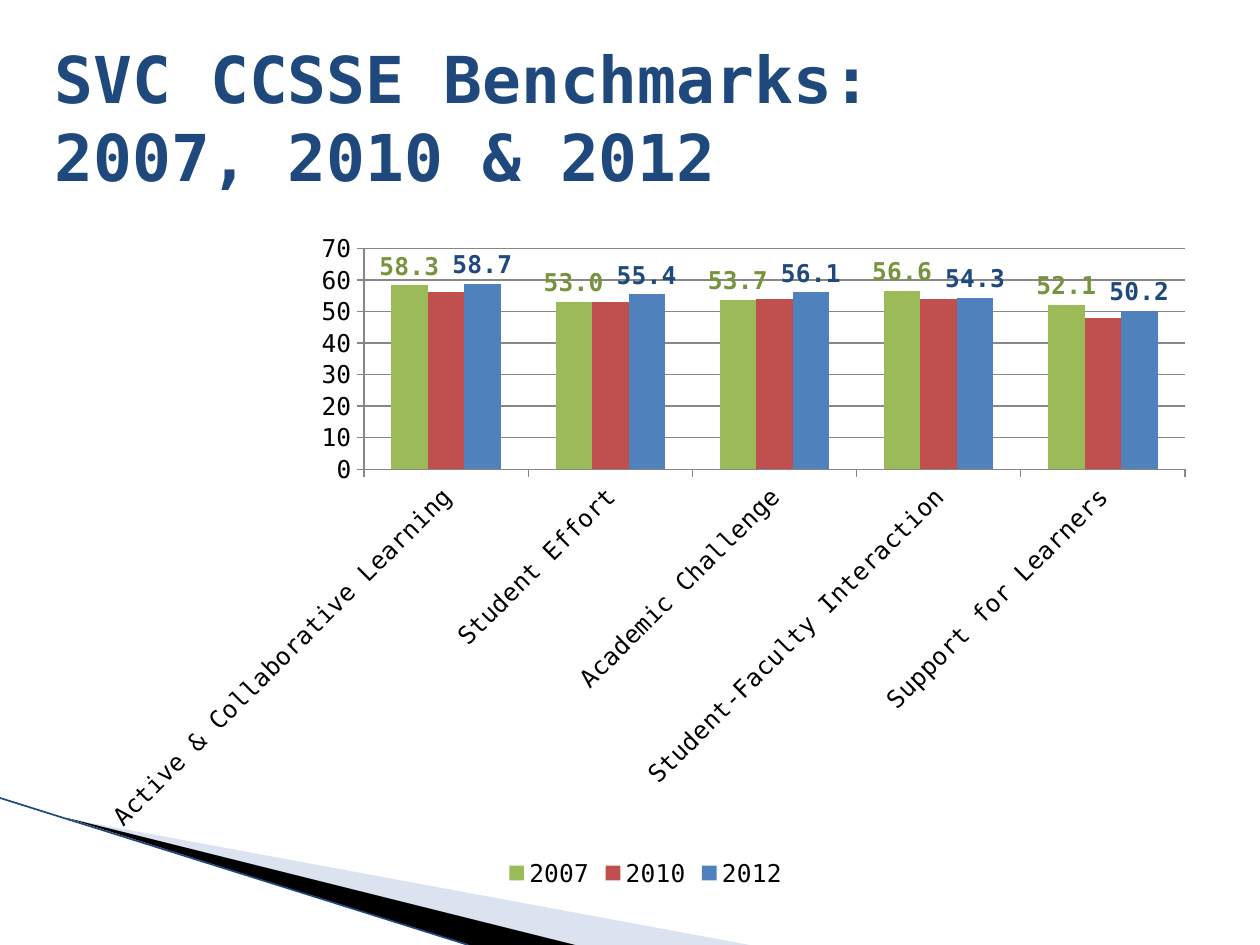
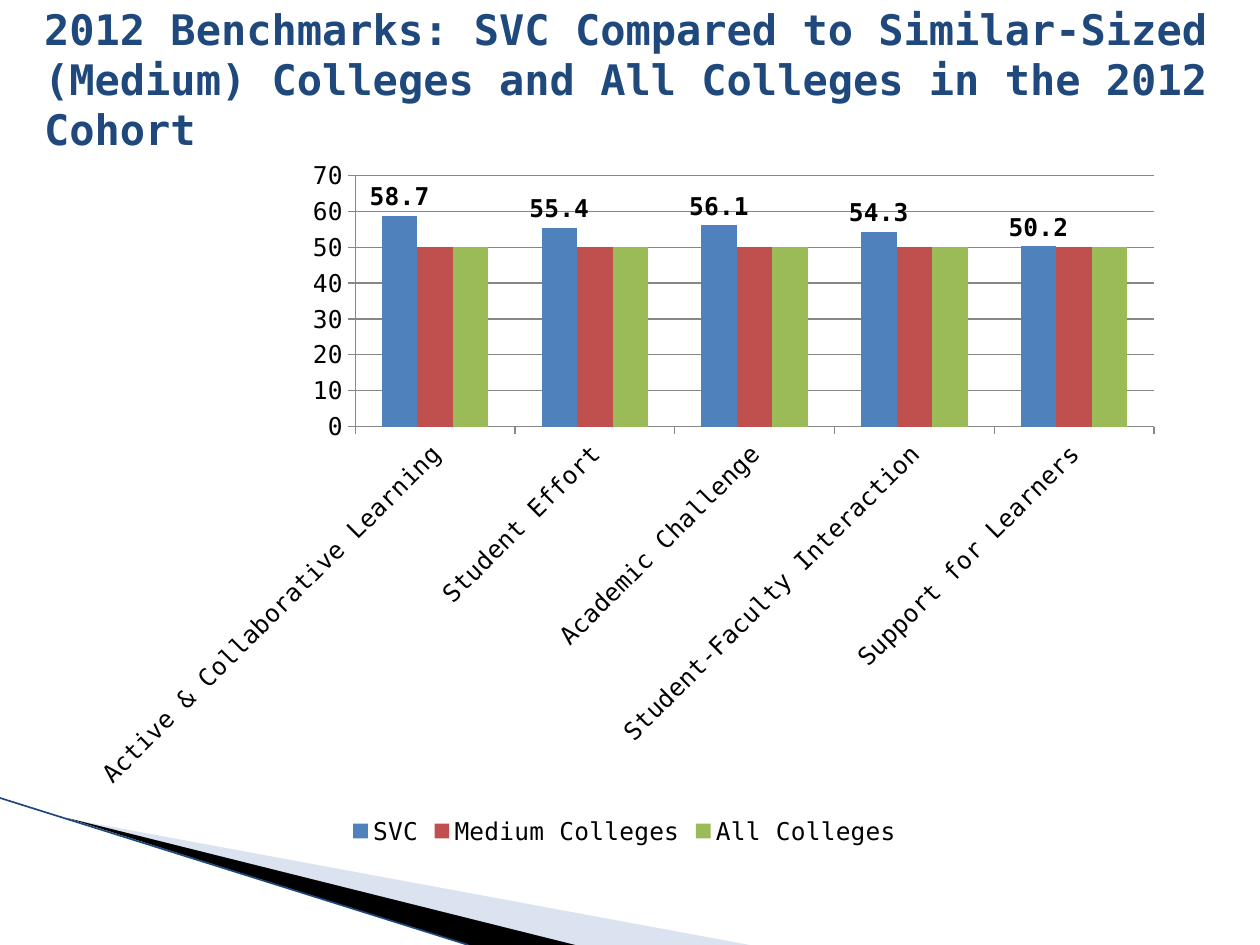
import dataclasses

import pptx
import pptx.chart.data
import pptx.dml.color
import pptx.enum.chart
import pptx.enum.shapes
import pptx.enum.text
import pptx.oxml.ns
import pptx.oxml.xmlchemy
import pptx.util

SLIDE_WIDTH = pptx.util.Inches(10)
SLIDE_HEIGHT = pptx.util.Inches(7.5)
COLUMNS, ROWS = 120, 90
TITLE_ONLY = 5


@dataclasses.dataclass(frozen=True)
class Theme:
    """Colours, font and type sizes of the deck."""
    font: str = "DejaVu Sans Mono"
    navy: str = "1F497D"
    black: str = "000000"
    pale_blue: str = "A7B9DB"
    grid: str = "878787"
    green: str = "9BBB59"
    dark_green: str = "77933C"
    red: str = "C0504D"
    blue: str = "4F81BD"
    large_title: float = 36.9
    small_title: float = 24
    chart_text: float = 14


@dataclasses.dataclass(frozen=True)
class Series:
    """One set of columns; label_color is set when values are shown."""
    name: str
    values: tuple
    color: str
    label_color: str = ""


THEME = Theme()
BENCHMARKS = ("Active & Collaborative Learning", "Student Effort",
              "Academic Challenge", "Student-Faculty Interaction",
              "Support for Learners")
SVC_2012 = (58.7, 55.4, 56.1, 54.3, 50.2)
COHORT_MEAN = (50,) * len(BENCHMARKS)


def rgb(color):
    """Turn a hex string into a colour."""
    return pptx.dml.color.RGBColor.from_string(color)


def grid(column, row):
    """Turn a column and a row into a place on the slide."""
    return int(SLIDE_WIDTH * column / COLUMNS), int(SLIDE_HEIGHT * row / ROWS)


def style_font(font, size, color, bold=False):
    """Apply the deck font with a size, colour and weight."""
    font.name = THEME.font
    font.size = pptx.util.Pt(size)
    font.color.rgb = rgb(color)
    font.bold = bold


def style_line(line, color, width=0.75):
    """Give a line its colour and width in points."""
    line.color.rgb = rgb(color)
    line.width = pptx.util.Pt(width)


def add_wedge(slide, corners, color, opacity=100):
    """Draw a filled outline through grid corners."""
    points = [grid(*corner) for corner in corners]
    builder = slide.shapes.build_freeform(*points[0], scale=1.0)
    builder.add_line_segments(points[1:], close=True)
    wedge = builder.convert_to_shape()
    wedge.shadow.inherit = False
    wedge.fill.solid()
    wedge.fill.fore_color.rgb = rgb(color)
    wedge.line.fill.background()
    if opacity < 100:
        tint = wedge.element.find(".//" + pptx.oxml.ns.qn("a:srgbClr"))
        alpha = pptx.oxml.xmlchemy.OxmlElement("a:alpha")
        alpha.set("val", str(opacity * 1000))
        tint.append(alpha)
    return wedge


def add_edge(slide, start, end, color):
    """Draw a thin straight line between two grid places."""
    edge = slide.shapes.add_connector(
        pptx.enum.shapes.MSO_CONNECTOR.STRAIGHT, *grid(*start), *grid(*end))
    style_line(edge.line, color, 0.95)
    edge.element.spPr.append(pptx.oxml.xmlchemy.OxmlElement("a:effectLst"))
    return edge


def decorate_layout(layout, slide):
    """Draw the corner sweep and move it to the shared layout."""
    sweep = (
        add_wedge(slide, ((6.6, 78), (71.4, 90), (54.7, 90)),
                  THEME.pale_blue, 40),
        add_wedge(slide, ((6.4, 77.9), (54.8, 90), (44.6, 90)), THEME.black),
        add_edge(slide, (0, 76), (44.6, 90), THEME.navy),
    )
    for shape in sweep:
        layout.element.cSld.spTree.append(shape.element)


def set_title(slide, lines, place, extent, size):
    """Place the title and write its lines."""
    title = slide.shapes.title
    title.left, title.top = grid(*place)
    title.width, title.height = grid(*extent)
    frame = title.text_frame
    frame.word_wrap = True
    frame.auto_size = pptx.enum.text.MSO_AUTO_SIZE.NONE
    frame.vertical_anchor = pptx.enum.text.MSO_ANCHOR.MIDDLE
    para = frame.paragraphs[0]
    para.alignment = pptx.enum.text.PP_ALIGN.LEFT
    for index, line in enumerate(lines):
        if index:
            para.add_line_break()
        span = para.add_run()
        span.text = line
        style_font(span.font, size, THEME.navy, bold=True)


def style_axes(chart):
    """Set the scale, gridlines and slanted category names."""
    value_axis, category_axis = chart.value_axis, chart.category_axis
    value_axis.minimum_scale, value_axis.maximum_scale = 0, 70
    value_axis.major_unit = 10
    value_axis.has_major_gridlines = True
    style_line(value_axis.major_gridlines.format.line, THEME.grid)
    value_axis.tick_labels.number_format = "0"
    value_axis.tick_labels.number_format_is_linked = False
    for axis in (value_axis, category_axis):
        axis.major_tick_mark = pptx.enum.chart.XL_TICK_MARK.OUTSIDE
        style_line(axis.format.line, THEME.grid)
        style_font(axis.tick_labels.font, THEME.chart_text, THEME.black)
    body = chart.element.xpath(".//c:catAx/c:txPr/a:bodyPr")[0]
    body.set("rot", str(-45 * 60000))
    body.set("vert", "horz")


def style_series(columns, series):
    """Colour one series and show its values where wanted."""
    columns.format.fill.solid()
    columns.format.fill.fore_color.rgb = rgb(series.color)
    columns.invert_if_negative = False
    if series.label_color:
        labels = columns.data_labels
        labels.show_value = True
        labels.number_format = "0.0"
        labels.number_format_is_linked = False
        labels.position = pptx.enum.chart.XL_LABEL_POSITION.OUTSIDE_END
        style_font(labels.font, THEME.chart_text, series.label_color, True)


def add_benchmark_chart(slide, place, extent, series_list):
    """Add a clustered column chart of the benchmarks."""
    data = pptx.chart.data.CategoryChartData()
    data.categories = BENCHMARKS
    for series in series_list:
        data.add_series(series.name, series.values)
    chart = slide.shapes.add_chart(
        pptx.enum.chart.XL_CHART_TYPE.COLUMN_CLUSTERED,
        *grid(*place), *grid(*extent), data).chart
    style_font(chart.font, THEME.chart_text, THEME.black)
    chart.has_title = False
    chart.has_legend = True
    chart.legend.position = pptx.enum.chart.XL_LEGEND_POSITION.BOTTOM
    chart.legend.include_in_layout = False
    style_font(chart.legend.font, THEME.chart_text, THEME.black)
    style_axes(chart)
    plot = chart.plots[0]
    plot.gap_width, plot.overlap = 150, 0
    plot.vary_by_categories = False
    for columns, series in zip(plot.series, series_list):
        style_series(columns, series)


def main():
    """Build both benchmark slides."""
    deck = pptx.Presentation()
    deck.slide_width, deck.slide_height = SLIDE_WIDTH, SLIDE_HEIGHT
    layout = deck.slide_layouts[TITLE_ONLY]

    trend = deck.slides.add_slide(layout)
    decorate_layout(layout, trend)
    set_title(trend, ("SVC CCSSE Benchmarks:", "2007, 2010 & 2012"),
              (4, 3.6), (104, 15), THEME.large_title)
    add_benchmark_chart(trend, (8, 21), (107, 64), (
        Series("2007", (58.3, 53, 53.7, 56.6, 52.1),
               THEME.green, THEME.dark_green),
        Series("2010", (56, 53, 54, 54, 48), THEME.red),
        Series("2012", SVC_2012, THEME.blue, THEME.navy),
    ))

    comparison = deck.slides.add_slide(layout)
    set_title(comparison,
              ("2012 Benchmarks: SVC Compared to Similar-Sized (Medium) "
               "Colleges and All Colleges in the 2012 Cohort",),
              (3, 0), (115, 15), THEME.small_title)
    add_benchmark_chart(comparison, (7, 14), (105, 67), (
        Series("SVC", SVC_2012, THEME.blue, THEME.black),
        Series("Medium Colleges", COHORT_MEAN, THEME.red),
        Series("All Colleges", COHORT_MEAN, THEME.green),
    ))
    deck.save("out.pptx")


if __name__ == "__main__":
    main()
